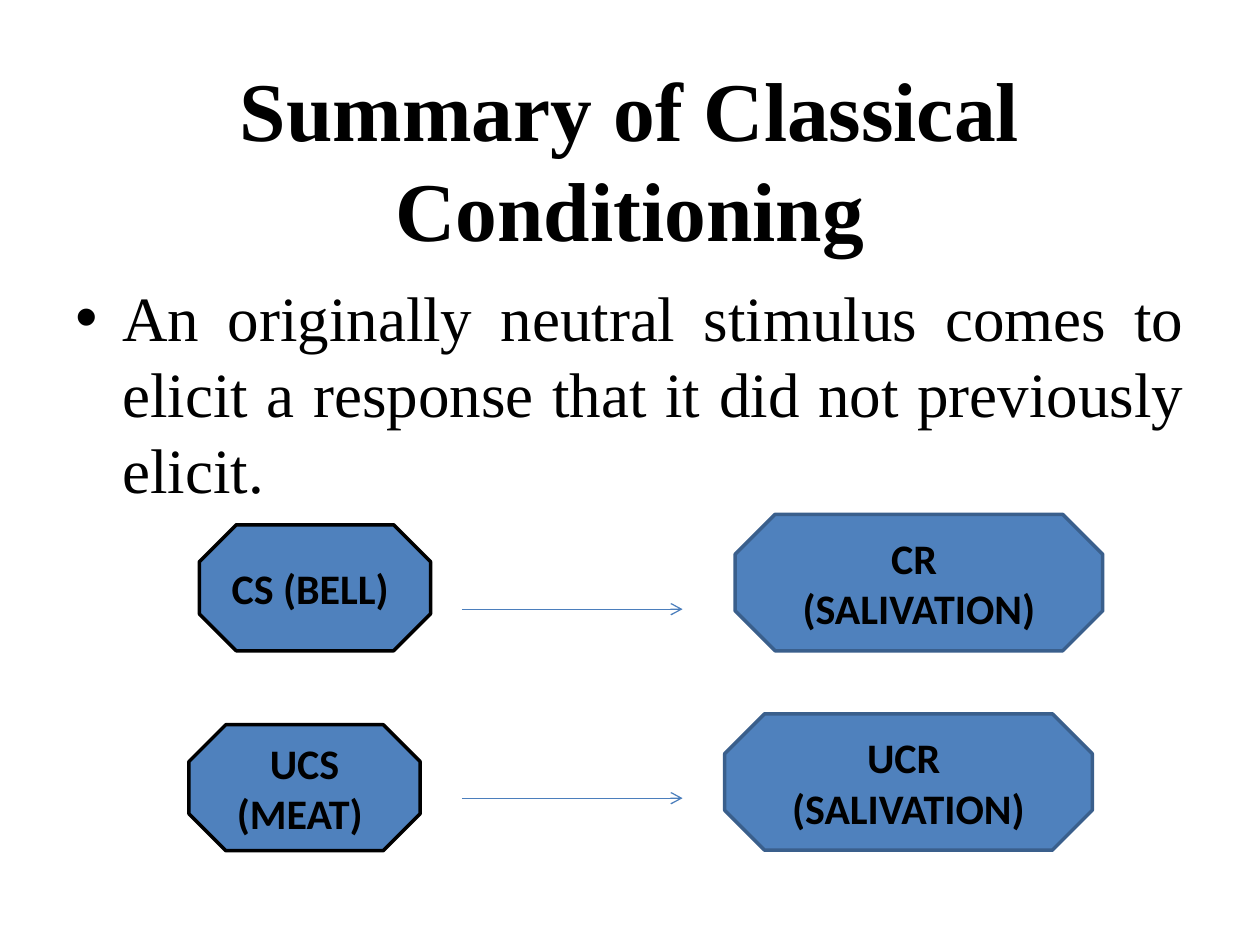
from lxml.etree import SubElement
from pptx import Presentation
from pptx.dml.color import RGBColor
from pptx.enum.shapes import MSO_CONNECTOR as CONN, MSO_SHAPE as SHAPE
from pptx.enum.text import MSO_ANCHOR as ANCHOR, MSO_AUTO_SIZE as AUTO, PP_ALIGN as ALIGN
from pptx.oxml.ns import qn
from pptx.util import Cm, Pt

BLACK = RGBColor(0x00, 0x00, 0x00)
BLUE = RGBColor(0x4F, 0x81, 0xBD)
DARK_BLUE = RGBColor(0x3A, 0x5F, 0x8C)
ARROW_BLUE = RGBColor(0x4B, 0x7E, 0xBC)


class SlideBuilder:
    serif = "Times New Roman"
    sans = "Calibri"

    def __init__(self, prs):
        self.s = prs.slides.add_slide(prs.slide_layouts[5])

    def add_text(self, p, text, font, size, align, bold=False):
        p.alignment = align
        r = p.add_run()
        r.text = text
        r.font.name = font
        r.font.size = Pt(size)
        r.font.bold = bold
        r.font.color.rgb = BLACK

    def title(self, text, x, y, w, h):
        sp = self.s.shapes.title
        sp.left, sp.top, sp.width, sp.height = Cm(x), Cm(y), Cm(w), Cm(h)
        tf = sp.text_frame
        tf.auto_size = AUTO.NONE
        tf.vertical_anchor = ANCHOR.MIDDLE
        self.add_text(tf.paragraphs[0], text, self.serif, 47.7, ALIGN.CENTER, True)

    def bullet(self, text, x, y, w, h):
        tf = self.s.shapes.add_textbox(Cm(x), Cm(y), Cm(w), Cm(h)).text_frame
        tf.word_wrap = True
        p = tf.paragraphs[0]
        pPr = p._p.get_or_add_pPr()
        pPr.set("marL", str(Cm(0.95)))
        pPr.set("indent", str(Cm(-0.95)))
        SubElement(pPr, qn("a:buFont"), typeface="Arial")
        SubElement(pPr, qn("a:buChar"), char="•")
        self.add_text(p, text, self.serif, 36, ALIGN.JUSTIFY)

    def octagon(self, lines, x, y, w, h, outline):
        sp = self.s.shapes.add_shape(SHAPE.OCTAGON, Cm(x), Cm(y), Cm(w), Cm(h))
        sp.shadow.inherit = False
        sp.fill.solid()
        sp.fill.fore_color.rgb = BLUE
        sp.line.color.rgb = outline
        sp.line.width = Pt(2)
        tf = sp.text_frame
        tf.word_wrap = True
        tf.vertical_anchor = ANCHOR.MIDDLE
        for i, line in enumerate(lines):
            p = tf.add_paragraph() if i else tf.paragraphs[0]
            self.add_text(p, line, self.sans, 24, ALIGN.CENTER, True)

    def arrow(self, x1, x2, y):
        cn = self.s.shapes.add_connector(CONN.STRAIGHT, Cm(x1), Cm(y), Cm(x2), Cm(y))
        cn.line.color.rgb = ARROW_BLUE
        cn.line.width = Pt(0.75)
        spPr = cn._element.spPr
        SubElement(spPr.find(qn("a:ln")), qn("a:tailEnd"), type="arrow")
        SubElement(spPr, qn("a:effectLst"))


def main():
    prs = Presentation()
    prs.slide_width, prs.slide_height = Cm(25.4), Cm(19.05)
    sb = SlideBuilder(prs)
    sb.title("Summary of Classical Conditioning", 1.27, 0.85, 22.86, 4.66)
    sb.bullet("An originally neutral stimulus comes to elicit a response "
              "that it did not previously elicit.", 1.27, 5.5, 22.86, 12.43)

    sb.octagon(["CS (BELL) "], 4.02, 10.58, 4.66, 2.54, BLACK)
    sb.octagon(["UCS (MEAT) "], 3.81, 14.61, 4.66, 2.54, BLACK)
    sb.octagon(["CR ", "(SALIVATION)"], 14.82, 10.37, 7.41, 2.75, DARK_BLUE)
    sb.octagon(["UCR ", "(SALIVATION)"], 14.61, 14.39, 7.41, 2.75, DARK_BLUE)
    for y in (12.28, 16.09):
        sb.arrow(9.31, 13.76, y)
    prs.save("out.pptx")


if __name__ == "__main__":
    main()
